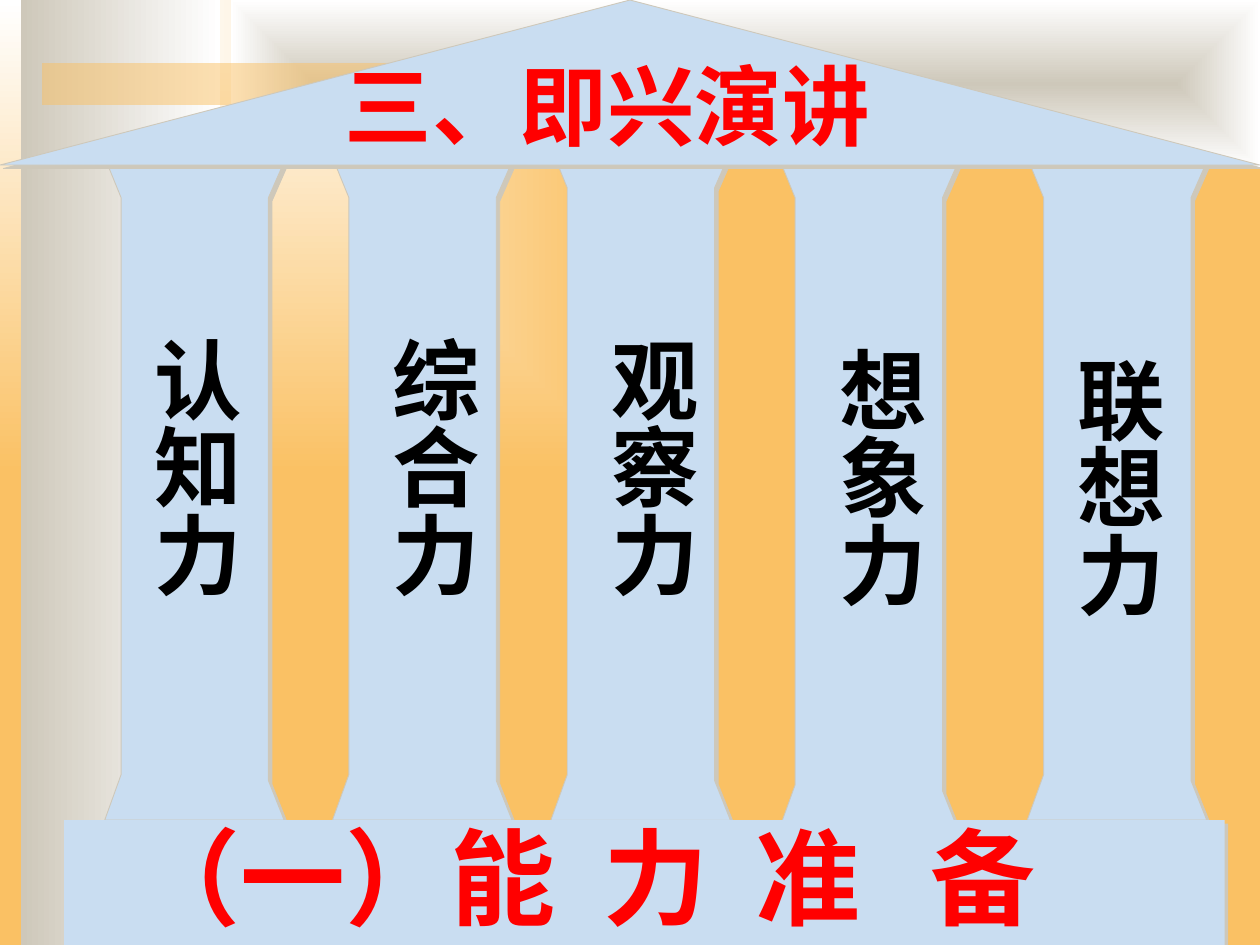
from lxml import etree
from pptx import Presentation
from pptx.dml.color import RGBColor
from pptx.enum.shapes import MSO_SHAPE
from pptx.enum.text import MSO_AUTO_SIZE
from pptx.oxml.ns import qn
from pptx.util import Pt

COLORS = {
    "orange": "FAC164",
    "white": "FFFFFF",
    "stone": "CEC8BA",
    "blue": "C9DDF1",
    "red": "FF0000",
    "black": "000000",
}

# Pillars: left, top, bottom, label, label left, label top, label height
PILLARS = [
    (59.8, 94.3, 468.7, "认知力", 70.6, 185, 300),
    (190, 94.3, 468.7, "综合力", 206.6, 185, 221),
    (314.8, 88.6, 468.7, "观察力", 331.9, 185, 221),
    (445, 94.3, 474.5, "想象力", 462.2, 190.8, 227),
    (587, 94.3, 468.7, "联想力", 598.3, 196.6, 238),
]


def rgb(name):
    return RGBColor.from_string(COLORS[name])


def set_gradient(fill, root, start, end, path=None, focus=None):
    """Two-colour gradient, linear unless a path and its focus (l, t, r, b) are given."""
    fill.gradient()
    for stop, name, position in zip(fill.gradient_stops, (start, end), (0, 1)):
        stop.color.rgb = rgb(name)
        stop.position = position
    if path is None:
        fill.gradient_angle = 0
        return
    grad = next(root.iter(qn("a:gradFill")))
    grad.remove(grad.find(qn("a:lin")))
    el = etree.SubElement(grad, qn("a:path"), path=path)
    rect = etree.SubElement(el, qn("a:fillToRect"))
    for side, percent in zip("ltrb", focus):
        rect.set(side, str(percent * 1000))


def add_box(s, left, top, width, height, kind=MSO_SHAPE.RECTANGLE):
    sp = s.shapes.add_shape(kind, Pt(left), Pt(top), Pt(width), Pt(height))
    sp.shadow.inherit = False
    sp.line.fill.background()
    return sp


def style_stone(sp, outline=True):
    """Light blue building part with a hard shadow to the lower right."""
    sp.fill.solid()
    sp.fill.fore_color.rgb = rgb("blue")
    if outline:
        sp.line.color.rgb = rgb("stone")
        sp.line.width = Pt(0.5)
    else:
        sp.line.fill.background()
    sp.shadow.inherit = False
    effects = sp._element.spPr.find(qn("a:effectLst"))
    shadow = etree.SubElement(effects, qn("a:outerShdw"), dist=str(Pt(2.8)),
                              dir="2700000", algn="ctr", rotWithShape="0")
    etree.SubElement(shadow, qn("a:srgbClr"), val=COLORS["stone"])


def add_pillar(s, left, top, bottom):
    points = [
        (left + 1.8, top), (left + 101.8, top), (left + 93.6, top + 18.7),
        (left + 93.6, bottom - 22.6), (left + 102.6, bottom), (left, bottom),
        (left + 9.4, bottom - 26), (left + 9.4, top + 18.7),
    ]
    points = [(Pt(x), Pt(y)) for x, y in points]
    builder = s.shapes.build_freeform(*points[0])
    builder.add_line_segments(points[1:], close=True)
    style_stone(builder.convert_to_shape())


def add_text(s, text, left, top, width, height, size=50, color="black",
             vertical=False, tabs=()):
    tf = s.shapes.add_textbox(Pt(left), Pt(top), Pt(width), Pt(height)).text_frame
    tf.word_wrap = True
    tf.auto_size = MSO_AUTO_SIZE.SHAPE_TO_FIT_TEXT
    if vertical:
        tf._txBody.bodyPr.set("vert", "eaVert")
    p = tf.paragraphs[0]
    if tabs:
        tab_list = etree.SubElement(p._p.get_or_add_pPr(), qn("a:tabLst"))
        for position in tabs:
            etree.SubElement(tab_list, qn("a:tab"), pos=str(Pt(position)), algn="l")
    r = p.add_run()
    r.text = text
    r.font.name = "Times New Roman"
    r.font.size = Pt(size)
    r.font.bold = True
    r.font.color.rgb = rgb(color)


def add_backdrop(s):
    set_gradient(s.background.fill, s._element, "white", "orange",
                 "rect", (0, 0, 100, 100))
    side = add_box(s, 12, 0, 114, 540)
    set_gradient(side.fill, side._element, "stone", "white")
    band = add_box(s, 132, 0, 588, 96)
    set_gradient(band.fill, band._element, "stone", "white",
                 "shape", (50, 50, 50, 50))
    bar = add_box(s, 24, 36, 198, 24)
    bar.fill.solid()
    bar.fill.fore_color.rgb = rgb("orange")
    color = next(bar._element.spPr.iter(qn("a:srgbClr")))
    etree.SubElement(color, qn("a:alpha"), val="50000")


def main():
    prs = Presentation()
    prs.slide_width, prs.slide_height = Pt(720), Pt(540)
    s = prs.slides.add_slide(prs.slide_layouts[6])
    add_backdrop(s)

    # Building: pillars, base and roof
    for left, top, bottom, *_ in PILLARS:
        add_pillar(s, left, top, bottom)
    style_stone(add_box(s, 36.7, 468.7, 663.1, 71.3), outline=False)
    style_stone(add_box(s, 0, 0, 720, 94.3, MSO_SHAPE.ISOSCELES_TRIANGLE))

    # Labels
    for *_, label, left, top, height in PILLARS:
        add_text(s, label, left, top, 74.2, height, vertical=True)
    add_text(s, "（一）能\t力\t准\t备", 70.6, 460.8, 612, 79.2, size=60,
             color="red", tabs=(267, 354, 454))
    add_text(s, "三、即兴演讲", 190, 26, 396.7, 67, color="red")

    prs.save("out.pptx")


if __name__ == "__main__":
    main()
